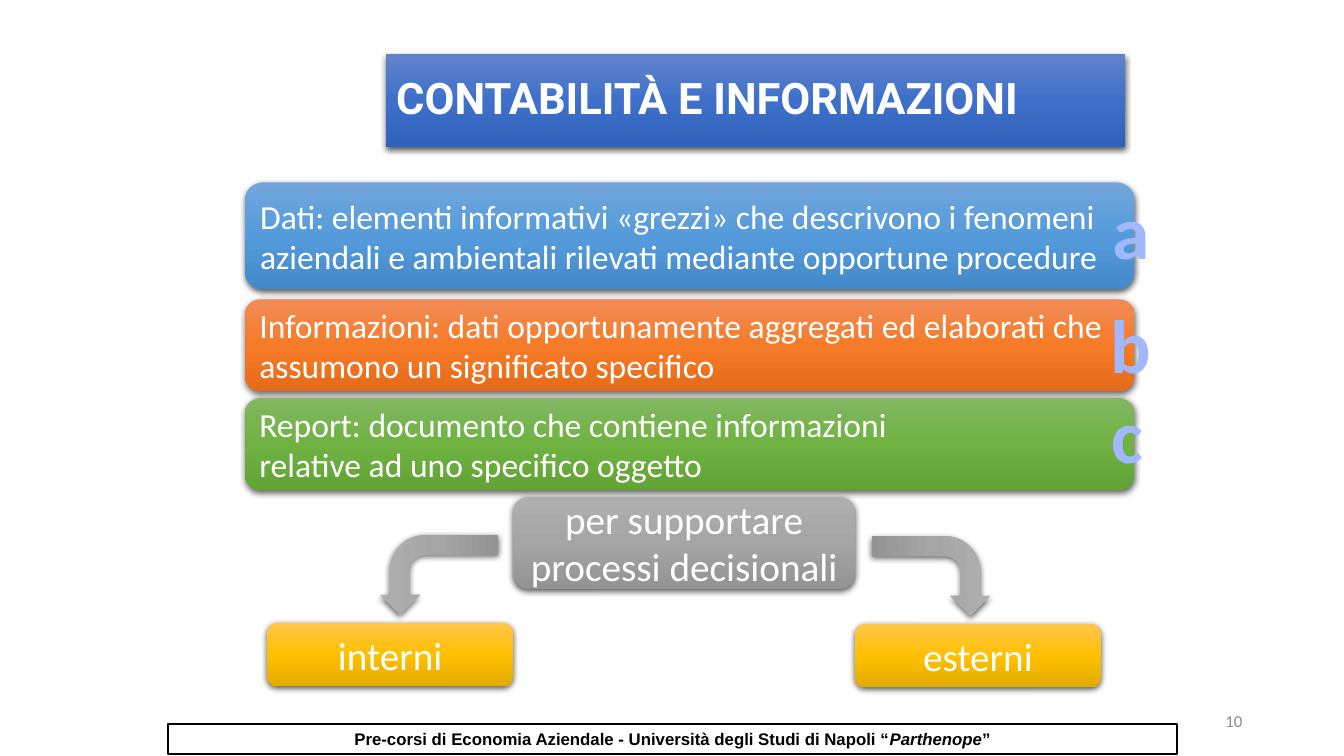
from dataclasses import dataclass

from lxml import etree
from pptx import Presentation
from pptx.dml.color import RGBColor
from pptx.enum.shapes import MSO_SHAPE
from pptx.enum.text import MSO_ANCHOR, MSO_AUTO_SIZE, PP_ALIGN
from pptx.oxml.ns import qn
from pptx.util import Pt

PX = 9144  # 100 px to the inch
TITLE_ONLY = 5
LEFT, CENTER, RIGHT = PP_ALIGN.LEFT, PP_ALIGN.CENTER, PP_ALIGN.RIGHT
TOP, MIDDLE = MSO_ANCHOR.TOP, MSO_ANCHOR.MIDDLE
NO_AUTOFIT = MSO_AUTO_SIZE.NONE
RECTANGLE, ROUNDED = MSO_SHAPE.RECTANGLE, MSO_SHAPE.ROUNDED_RECTANGLE
BENT_ARROW = MSO_SHAPE.BENT_ARROW

# Gradients run from top to bottom
TITLE_BLUE = ("6183CB", "3E70CA", "3062BB")
BLUE = ("71A6DB", "559BDB", "448ACA")
ORANGE = ("F18C57", "F67B28", "E56C19")
GREEN = ("81B861", "6FB242", "62A336")
GRAY = ("AFAFAF", "A5A5A5", "939393")
GOLD = ("FFC64B", "FFC000", "E3AB00")
LETTER_BLUE = "A1B8FF"


@dataclass
class Box:
    left: int
    top: int
    width: int
    height: int

    def emu(self) -> tuple:
        return tuple(n * PX for n in (self.left, self.top, self.width, self.height))


@dataclass
class Card:
    box: Box
    colors: tuple
    text: str
    size: int
    align: PP_ALIGN


@dataclass
class Letter:
    text: str
    box: Box


@dataclass
class Arrow:
    box: Box
    rotation: int
    flipped: bool


CARDS = [
    Card(Box(243, 181, 882, 106), BLUE,
         "Dati: elementi informativi «grezzi» che descrivono i fenomeni aziendali "
         "e ambientali rilevati mediante opportune procedure", 24, LEFT),
    Card(Box(243, 297, 882, 91), ORANGE,
         "Informazioni: dati opportunamente aggregati ed elaborati che "
         "assumono un significato specifico", 24, LEFT),
    Card(Box(243, 395, 882, 91), GREEN,
         "Report: documento che contiene informazioni\n"
         "relative ad uno specifico oggetto", 24, LEFT),
    Card(Box(509, 493, 339, 91), GRAY, "per supportare processi decisionali", 28, CENTER),
    Card(Box(265, 618, 244, 63), GOLD, "interni", 28, CENTER),
    Card(Box(848, 619, 244, 63), GOLD, "esterni", 28, CENTER),
]
LETTERS = [
    Letter("a", Box(1093, 178, 58, 101)),
    Letter("b", Box(1091, 291, 61, 101)),
    Letter("c", Box(1092, 380, 52, 101)),
]
ARROWS = [
    Arrow(Box(396, 512, 79, 117), 270, True),
    Arrow(Box(884, 513, 79, 117), 90, False),
]


def rgb(color: str) -> RGBColor:
    return RGBColor.from_string(color)


def add_color(parent, color: str):
    return etree.SubElement(parent, qn("a:srgbClr"), val=color)


def style_surface(shape, colors: tuple) -> None:
    """Give a shape a three-stop gradient, no line and a soft shadow."""
    shape.fill.gradient()
    shape.fill.gradient_angle = 270
    shape.line.fill.background()
    properties = shape._element.spPr
    stops = properties.find(qn("a:gradFill")).find(qn("a:gsLst"))
    for stop in list(stops):
        stops.remove(stop)
    for index, color in enumerate(colors):
        add_color(etree.SubElement(stops, qn("a:gs"), pos=str(index * 50000)), color)
    shape.shadow.inherit = False
    shadow = etree.SubElement(
        properties.find(qn("a:effectLst")), qn("a:outerShdw"), blurRad=str(Pt(4.5)),
        dist=str(Pt(1.5)), dir="5400000", algn="ctr", rotWithShape="0")
    etree.SubElement(add_color(shadow, "000000"), qn("a:alpha"), val="63000")


def write_text(shape, text: str, *, size: int, color: str = "FFFFFF",
               font: str = "Calibri", bold: bool = False, align: PP_ALIGN = LEFT,
               anchor: MSO_ANCHOR = MIDDLE, wrap: bool = True,
               italic_part: str = "", spacing: float = 1.0) -> None:
    frame = shape.text_frame
    frame.auto_size = NO_AUTOFIT
    frame.word_wrap = wrap
    frame.vertical_anchor = anchor
    for index, line in enumerate(text.split("\n")):
        paragraph = frame.paragraphs[0] if index == 0 else frame.add_paragraph()
        paragraph.alignment = align
        paragraph.line_spacing = spacing
        before, part, after = line.partition(italic_part) if italic_part else (line, "", "")
        for words in filter(None, (before, part, after)):
            run = paragraph.add_run()
            run.text = words
            run.font.size = Pt(size)
            run.font.name = font
            run.font.bold = bold
            run.font.italic = words == italic_part
            run.font.color.rgb = rgb(color)


def add_card(slide, card: Card) -> None:
    shape = slide.shapes.add_shape(ROUNDED, *card.box.emu())
    style_surface(shape, card.colors)
    write_text(shape, card.text, size=card.size, align=card.align)


def add_letter(slide, letter: Letter) -> None:
    shape = slide.shapes.add_textbox(*letter.box.emu())
    write_text(shape, letter.text, size=54, color=LETTER_BLUE, bold=True,
               align=CENTER, anchor=TOP, wrap=False)


def add_arrow(slide, arrow: Arrow) -> None:
    shape = slide.shapes.add_shape(BENT_ARROW, *arrow.box.emu())
    style_surface(shape, GRAY)
    shape.rotation = arrow.rotation
    if arrow.flipped:
        shape._element.spPr.find(qn("a:xfrm")).set("flipH", "1")


def main() -> None:
    presentation = Presentation()
    presentation.slide_width, presentation.slide_height = 1333 * PX, 750 * PX
    slide = presentation.slides.add_slide(presentation.slide_layouts[TITLE_ONLY])

    # Title
    title = slide.shapes.title
    title.left, title.top, title.width, title.height = Box(383, 54, 733, 92).emu()
    style_surface(title, TITLE_BLUE)
    write_text(title, "CONTABILITÀ E INFORMAZIONI", size=31, font="Roboto",
               bold=True, spacing=0.9)

    # Definitions, decision support and its two audiences
    for card in CARDS:
        add_card(slide, card)
    for letter in LETTERS:
        add_letter(slide, letter)
    for arrow in ARROWS:
        add_arrow(slide, arrow)

    # Footer and slide number
    footer = slide.shapes.add_shape(RECTANGLE, *Box(167, 718, 1000, 30).emu())
    footer.fill.background()
    footer.line.color.rgb = rgb("000000")
    footer.line.width = Pt(1.5)
    footer.shadow.inherit = False
    write_text(footer, "Pre-corsi di Economia Aziendale - Università degli Studi di "
               "Napoli “Parthenope”", size=12, color="000000", font="Arial",
               bold=True, align=CENTER, anchor=TOP, italic_part="Parthenope")
    number = slide.shapes.add_textbox(*Box(942, 695, 300, 40).emu())
    write_text(number, "10", size=12, color="8C8C8C", align=RIGHT)

    presentation.save("out.pptx")


if __name__ == "__main__":
    main()
